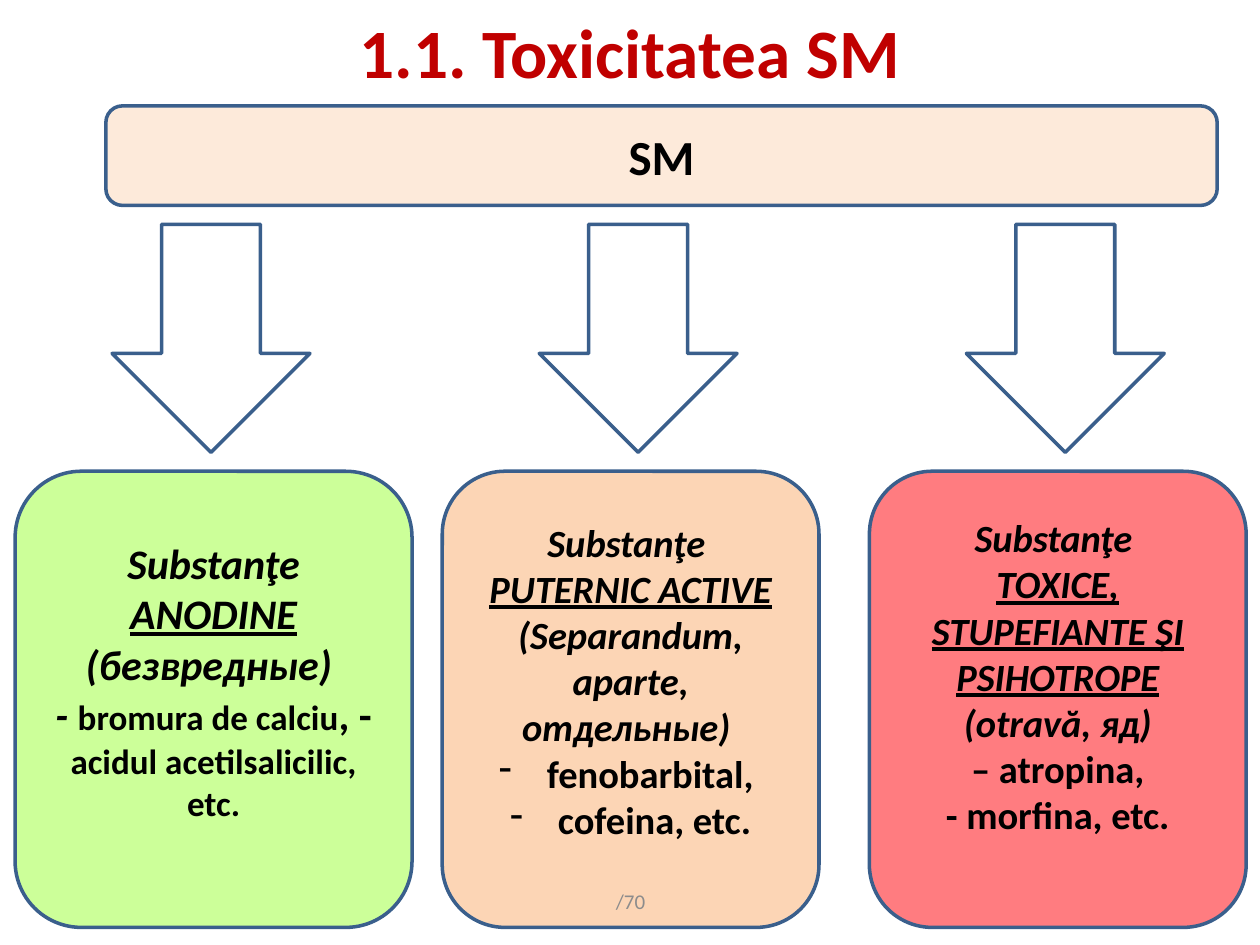
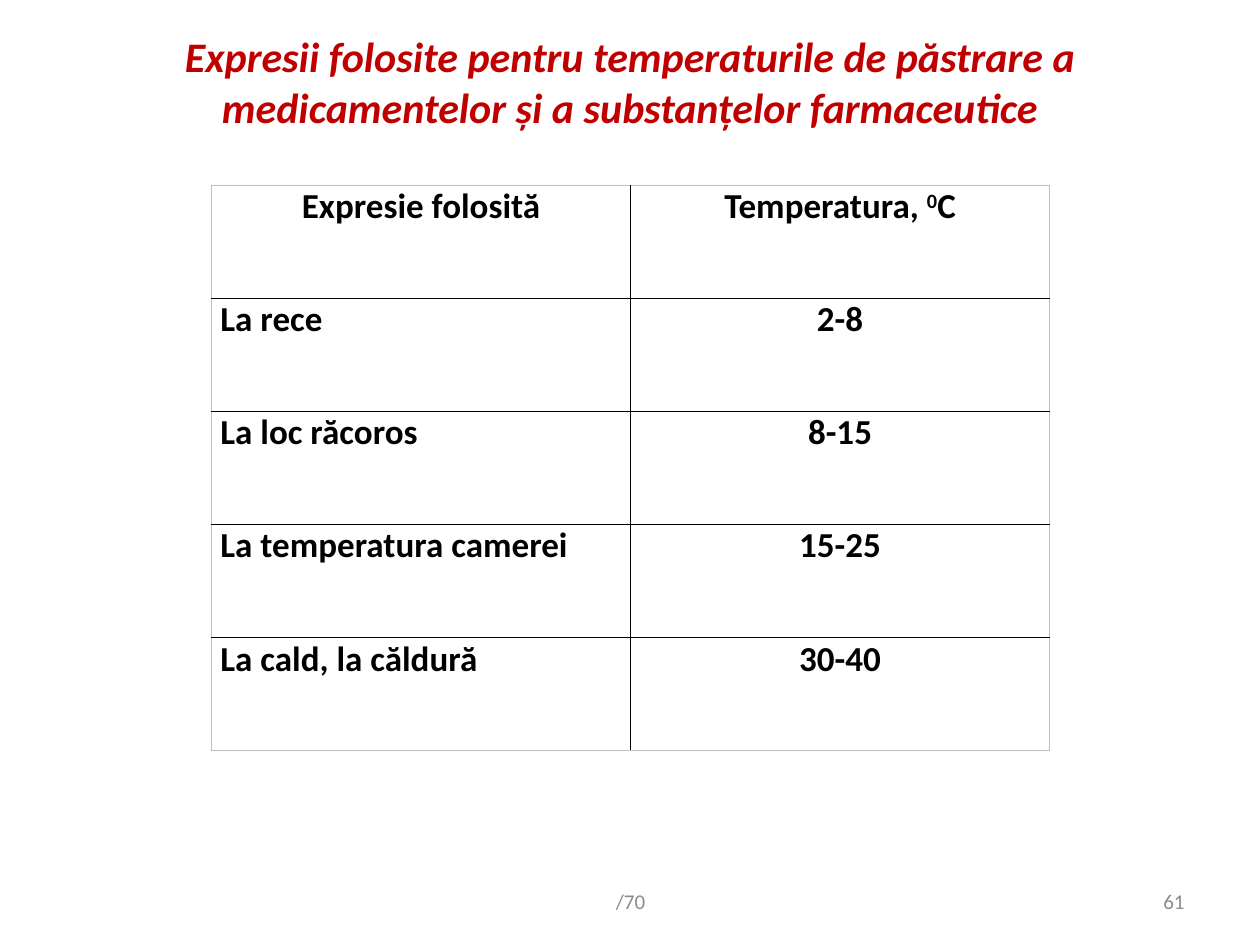
from dataclasses import dataclass

import pptx
import pptx.util
import pptx.dml.color
import pptx.enum.shapes
import pptx.enum.text
import pptx.oxml.ns
from lxml import etree

ALIGN = pptx.enum.text.PP_ALIGN
SHAPE = pptx.enum.shapes.MSO_SHAPE


@dataclass(frozen=True)
class Theme:
    font: str = "Calibri"
    title: str = "C00000"
    ink: str = "000000"
    muted: str = "8C8C8C"
    outline: str = "3A5F8C"
    paper: str = "FFFFFF"
    band: str = "FDEADA"
    anodyne: str = "CCFF99"
    active: str = "FCD5B5"
    toxic: str = "FF7C80"
    table_edge: str = "BFBFBF"
    title_size: float = 39.6
    heading_size: float = 28
    large: float = 24
    medium: float = 22
    small: float = 20
    footer_size: float = 12


THEME = Theme()
WIDTH, HEIGHT = pptx.util.Inches(10), pptx.util.Inches(7.5)
COLUMNS, ROWS = 100, 75
CARD_PITCH = 33.9


def across(columns):
    return round(WIDTH * columns / COLUMNS)


def down(rows):
    return round(HEIGHT * rows / ROWS)


def place(left, top, width, height):
    return across(left), down(top), across(width), down(height)


def colour(code):
    return pptx.dml.color.RGBColor.from_string(code)


def span(words, size, bold=True, italic=False, underline=False, ink=THEME.ink, baseline=0):
    return dict(words=words, size=size, bold=bold, italic=italic,
                underline=underline, ink=ink, baseline=baseline)


def add_bullet(para, mark="-"):
    indent = across(3.8)
    properties = para._p.get_or_add_pPr()
    properties.set("marL", str(indent))
    properties.set("indent", str(-indent))
    bullet = etree.SubElement(properties, pptx.oxml.ns.qn("a:buChar"))
    bullet.set("char", mark)


def write(frame, paragraphs, align=ALIGN.CENTER, bulleted=()):
    """Fill a text frame; each paragraph is a list of spans."""
    frame.word_wrap = True
    for index, spans in enumerate(paragraphs):
        para = frame.paragraphs[0] if index == 0 else frame.add_paragraph()
        para.alignment = align
        if index in bulleted:
            add_bullet(para)
        for item in spans:
            run = para.add_run()
            run.text = item["words"]
            run.font.name = THEME.font
            run.font.size = pptx.util.Pt(item["size"])
            run.font.bold = item["bold"]
            run.font.italic = item["italic"]
            run.font.underline = item["underline"]
            run.font.color.rgb = colour(item["ink"])
            if item["baseline"]:
                run._r.get_or_add_rPr().set("baseline", str(item["baseline"] * 1000))


def add_text(page, area, spans, align=ALIGN.CENTER):
    box = page.shapes.add_textbox(*place(*area))
    box.text_frame.vertical_anchor = pptx.enum.text.MSO_ANCHOR.MIDDLE
    write(box.text_frame, [spans], align)


def add_title(page, words, size, top, height, italic=False):
    add_text(page, (5, top, 90, height), [span(words, size, italic=italic, ink=THEME.title)])


def add_footer(page, number=None):
    def note(words):
        return [span(words, THEME.footer_size, bold=False, ink=THEME.muted)]

    if number:
        add_text(page, (71.7, 69.5, 23.3, 4), note(number), ALIGN.RIGHT)
    add_text(page, (34.2, 69.5, 31.7, 4), note("/70"))


def add_block(page, kind, area, fill):
    block = page.shapes.add_shape(kind, *place(*area))
    block.shadow.inherit = False
    block.fill.solid()
    block.fill.fore_color.rgb = colour(fill)
    block.line.color.rgb = colour(THEME.outline)
    block.line.width = pptx.util.Pt(2)
    block.text_frame.vertical_anchor = pptx.enum.text.MSO_ANCHOR.MIDDLE
    return block


def add_card(page, index, width, fill, paragraphs, lift, bulleted=()):
    """Add an arrow and the card below it; lift raises the text by a deeper bottom inset."""
    left = 1.2 + index * CARD_PITCH
    add_block(page, SHAPE.DOWN_ARROW, (left + 7.7, 17.8, 15.7, 18.1), THEME.paper)
    card = add_block(page, SHAPE.ROUNDED_RECTANGLE, (left, 37.4, width, 36.2), fill)
    card.text_frame.margin_bottom = down(0.5 + lift)
    write(card.text_frame, paragraphs, bulleted=bulleted)


def set_border(cell, side, ink, points):
    properties = cell._tc.get_or_add_tcPr()
    line = etree.SubElement(properties, pptx.oxml.ns.qn("a:" + side))
    line.set("w", str(pptx.util.Pt(points)))
    fill = etree.SubElement(line, pptx.oxml.ns.qn("a:solidFill"))
    etree.SubElement(fill, pptx.oxml.ns.qn("a:srgbClr")).set("val", ink)


def add_grid(page, area, rows):
    """Add a table with black inner rules and a faint outer edge."""
    row_count, column_count = len(rows), len(rows[0])
    table = page.shapes.add_table(row_count, column_count, *place(*area)).table
    for row_index, row in enumerate(rows):
        for column_index, spans in enumerate(row):
            cell = table.cell(row_index, column_index)
            cell.margin_left = cell.margin_right = across(0.7)
            cell.margin_top = cell.margin_bottom = 0
            outer = {"lnL": column_index == 0, "lnR": column_index == column_count - 1,
                     "lnT": row_index == 0, "lnB": row_index == row_count - 1}
            for side, at_edge in outer.items():
                if at_edge:
                    set_border(cell, side, THEME.table_edge, 0.5)
                else:
                    set_border(cell, side, THEME.ink, 1)
            cell.fill.solid()
            cell.fill.fore_color.rgb = colour(THEME.paper)
            is_label = row_index > 0 and column_index == 0
            write(cell.text_frame, [spans], ALIGN.LEFT if is_label else ALIGN.CENTER)


def build_toxicity(page):
    large, medium, small = THEME.large, THEME.medium, THEME.small
    add_title(page, "1.1. Toxicitatea SM", THEME.title_size, 1.3, 5.4)
    band = add_block(page, SHAPE.FLOWCHART_ALTERNATE_PROCESS, (8.4, 8.4, 88.2, 7.9), THEME.band)
    write(band.text_frame, [[span("SM", THEME.heading_size)]])

    add_card(page, 0, 31.5, THEME.anodyne, [
        [span("Substanţe ", large, italic=True),
         span("ANODINE ", large, italic=True, underline=True),
         span("(безвредные) ", large, italic=True)],
        [span("- ", large, italic=True), span("bromura de calciu", small),
         span(", - ", large), span("acidul acetilsalicilic, etc.", small)],
    ], lift=3)
    add_card(page, 1, 29.9, THEME.active, [
        [span("Substanţe ", medium, italic=True)],
        [span("PUTERNIC ACTIVE", medium, italic=True, underline=True)],
        [span("(Separandum, aparte, отдельные) ", medium, italic=True)],
        [span("fenobarbital, ", medium)],
        [span("cofeina, etc.", medium)],
    ], lift=3, bulleted=(3, 4))
    add_card(page, 2, 29.9, THEME.toxic, [
        [span("Substanţe ", medium, italic=True)],
        [span("TOXICE, STUPEFIANTE ŞI PSIHOTROPE ", medium, italic=True, underline=True),
         span("(otravă, яд)", medium, italic=True)],
        [span("– atropina,", medium)],
        [span("- morfina, etc.", medium)],
    ], lift=3.7)
    add_footer(page)


def build_temperatures(page):
    size = THEME.small
    add_title(page, "Expresii folosite pentru temperaturile de păstrare a medicamentelor "
              "și a substanțelor farmaceutice", THEME.large, 3, 6.9, italic=True)
    header = [[span("Expresie folosită", size)],
              [span("Temperatura, ", size), span("0", size, baseline=30), span("C", size)]]
    ranges = [("La rece", "2-8"), ("La loc răcoros", "8-15"),
              ("La temperatura camerei", "15-25"), ("La cald, la căldură", "30-40")]
    body = [[[span(words, size)] for words in pair] for pair in ranges]
    add_grid(page, (16.8, 14.7, 66.5, 44.9), [header] + body)
    add_footer(page, "61")


def main():
    deck = pptx.Presentation()
    deck.slide_width, deck.slide_height = WIDTH, HEIGHT
    for build in (build_toxicity, build_temperatures):
        build(deck.slides.add_slide(deck.slide_layouts[6]))
    deck.save("out.pptx")


if __name__ == "__main__":
    main()
